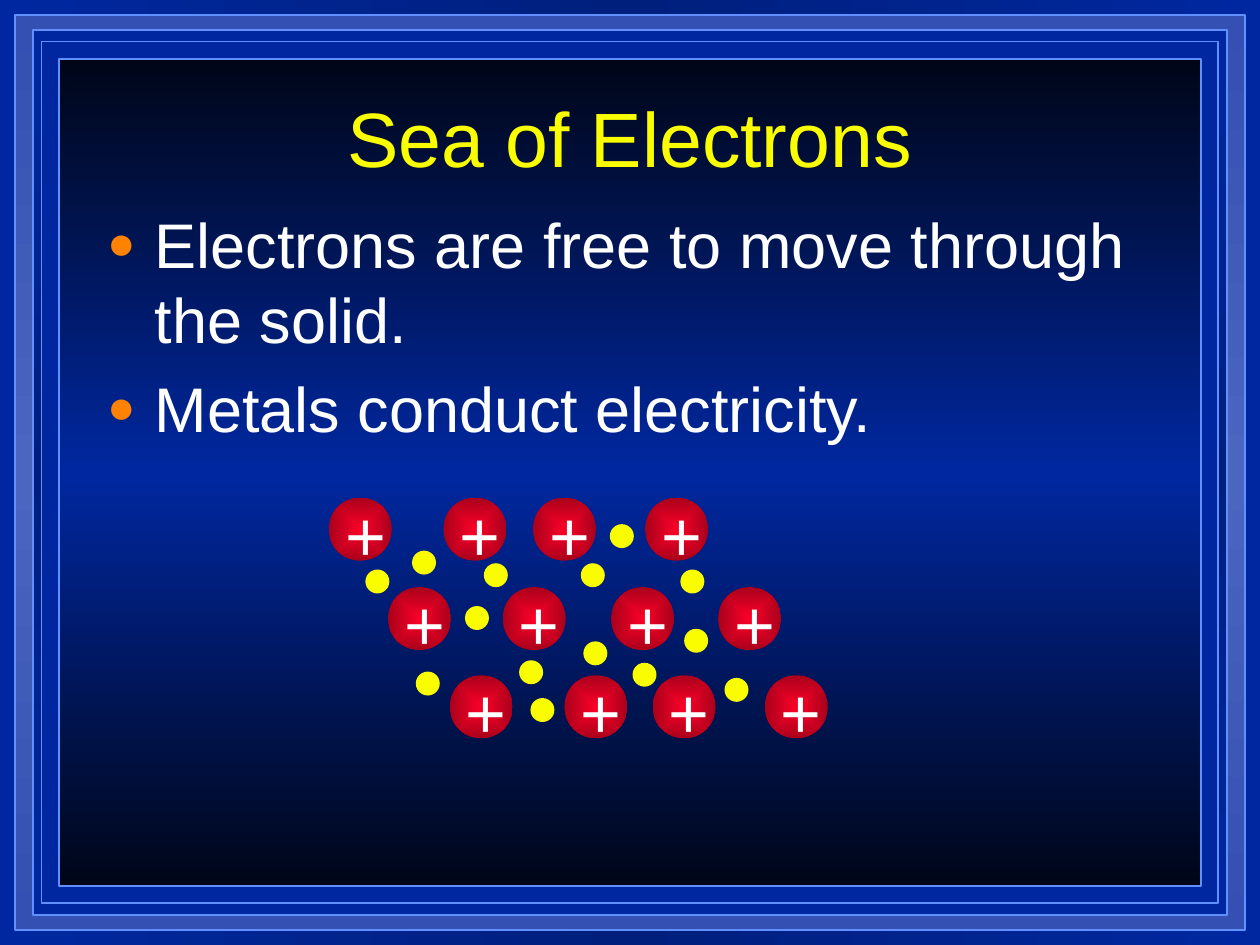
from lxml.etree import SubElement
from pptx import Presentation
from pptx.dml.color import RGBColor
from pptx.enum.dml import MSO_PATTERN
from pptx.enum.shapes import MSO_SHAPE as Shape
from pptx.enum.text import MSO_ANCHOR as Anchor, MSO_AUTO_SIZE as AutoSize, PP_ALIGN as Align
from pptx.oxml import parse_xml
from pptx.oxml.ns import qn
from pptx.util import Inches, Pt

WIDTH, HEIGHT = Inches(10), Inches(7.5)
COLOUR = {"deep": "00279F", "rim": "618FFD", "yellow": "FAFD00", "white": "FFFFFF"}
NS = 'xmlns:a="http://schemas.openxmlformats.org/drawingml/2006/main"'


def colour(hex_value):
    return RGBColor.from_string(hex_value)


def gradient(properties, stops, direction):
    """Put a gradient fill after the geometry; direction is a:lin or a:path markup."""
    marks = "".join(f'<a:gs pos="{share * 1000}"><a:srgbClr val="{tone}"/></a:gs>'
                    for share, tone in stops)
    fill = parse_xml(f'<a:gradFill {NS} rotWithShape="1"><a:gsLst>{marks}</a:gsLst>'
                     f'{direction}</a:gradFill>')
    old = properties.find(qn("a:gradFill"))
    properties.replace(old, fill)


deck = Presentation()
deck.slide_width, deck.slide_height = WIDTH, HEIGHT
slide = deck.slides.add_slide(deck.slide_layouts[1])
title, body = slide.placeholders
tree = slide.shapes._spTree

ACROSS, DOWN = '<a:lin ang="0" scaled="0"/>', '<a:lin ang="5400000" scaled="0"/>'
CENTRE = '<a:path path="shape"><a:fillToRect l="50000" t="50000" r="50000" b="50000"/></a:path>'

# Background and nested frames
slide.background.fill.gradient()
gradient(slide.background._cSld.bg.bgPr,
         [(0, COLOUR["deep"]), (50, "001F7D"), (100, COLOUR["deep"])], ACROSS)

frames = [  # left and top margin, end colour, middle colour
    (0.12, 0.12, "3350B2", "4A66BF"),
    (0.26, 0.24, COLOUR["deep"], "001F7D"),
    (0.33, 0.33, None, None),
    (0.47, 0.47, "000618", COLOUR["deep"]),
]
for left, top, edge, middle in frames:
    frame = slide.shapes.add_shape(Shape.RECTANGLE, Inches(left), Inches(top),
                                   WIDTH - 2 * Inches(left), HEIGHT - 2 * Inches(top))
    frame.shadow.inherit = False
    frame.line.color.rgb, frame.line.width = colour(COLOUR["rim"]), Pt(1)
    if edge:
        frame.fill.gradient()
        gradient(frame._element.spPr, [(0, edge), (50, middle), (100, edge)], DOWN)
    else:
        frame.fill.patterned()
        frame.fill.pattern = MSO_PATTERN.PERCENT_90
        frame.fill.fore_color.rgb = frame.fill.back_color.rgb = colour(COLOUR["deep"])

# Title
tree.append(title._element)
title.left, title.top, title.width, title.height = map(Inches, (0.75, 0.67, 8.5, 0.83))
title.text_frame.text = "Sea of Electrons"
title.text_frame.paragraphs[0].alignment = Align.CENTER

# Metal ions in three staggered rows, with the electrons between them
lattice = slide.shapes.add_group_shape().shapes
ION, ELECTRON = 0.5, 0.19
ion_rows = [
    (3.95, (2.61, 3.52, 4.23, 5.12)),
    (4.66, (3.08, 3.99, 4.85, 5.7)),
    (5.36, (3.57, 4.48, 5.18, 6.07)),
]
charges = []
for top, lefts in ion_rows:
    for left in lefts:
        ion = lattice.add_shape(Shape.OVAL, *map(Inches, (left, top, ION, ION)))
        ion.shadow.inherit = False
        ion.line.fill.background()
        ion.fill.gradient()
        gradient(ion._element.spPr, [(0, "FC0128"), (100, "A9011B")], CENTRE)
        charge = lattice.add_textbox(*map(Inches, (left + 0.03, top - 0.1, 0.33, 0.77)))
        charge.text_frame.text = "+"
        charges.append(charge)

electrons = [
    (4.61, 4.47), (3.27, 4.37), (3.3, 5.33), (3.69, 4.81), (3.84, 4.47),
    (4.21, 5.54), (5.75, 5.38), (4.63, 5.09), (5.02, 5.26), (5.43, 4.99),
    (5.4, 4.52), (4.84, 4.16), (2.9, 4.52), (4.12, 5.24),
]
for left, top in electrons:
    electron = lattice.add_shape(Shape.OVAL, *map(Inches, (left, top, ELECTRON, ELECTRON)))
    electron.shadow.inherit = False
    electron.line.fill.background()
    electron.fill.solid()
    electron.fill.fore_color.rgb = colour(COLOUR["yellow"])

# Statements
tree.append(body._element)
body.left, body.top, body.width, body.height = map(Inches, (0.75, 1.58, 8.5, 5.08))
body.text_frame.text = "Electrons are free to move through the solid.\nMetals conduct electricity."

# Text formats: size, colour, space before in percent, fitting, anchor
formats = [
    ([title], 44, "yellow", 0, AutoSize.SHAPE_TO_FIT_TEXT, Anchor.MIDDLE),
    (charges, 40, "white", 50, AutoSize.SHAPE_TO_FIT_TEXT, Anchor.TOP),
    ([body], 36, "white", 20, AutoSize.NONE, Anchor.TOP),
]
for members, size, tone, before, fitting, anchor in formats:
    for member in members:
        for key, value in {"word_wrap": True, "auto_size": fitting,
                           "vertical_anchor": anchor}.items():
            setattr(member.text_frame, key, value)
        for paragraph in member.text_frame.paragraphs:
            spacing = SubElement(paragraph._p.get_or_add_pPr(), qn("a:spcBef"))
            SubElement(spacing, qn("a:spcPct"), val=str(before * 1000))
            font = paragraph.runs[0].font
            for key, value in {"name": "Arial", "size": Pt(size)}.items():
                setattr(font, key, value)
            font.color.rgb = colour(COLOUR[tone])

for paragraph in body.text_frame.paragraphs:
    properties = paragraph._p.pPr
    properties.set("marL", str(Inches(0.38)))
    properties.set("indent", str(-Inches(0.38)))
    SubElement(SubElement(properties, qn("a:buClr")), qn("a:srgbClr"), val="FF8203")
    SubElement(properties, qn("a:buSzPct"), val="75000")
    SubElement(properties, qn("a:buFont"), typeface="Arial")
    SubElement(properties, qn("a:buChar"), char="●")

deck.save("out.pptx")
